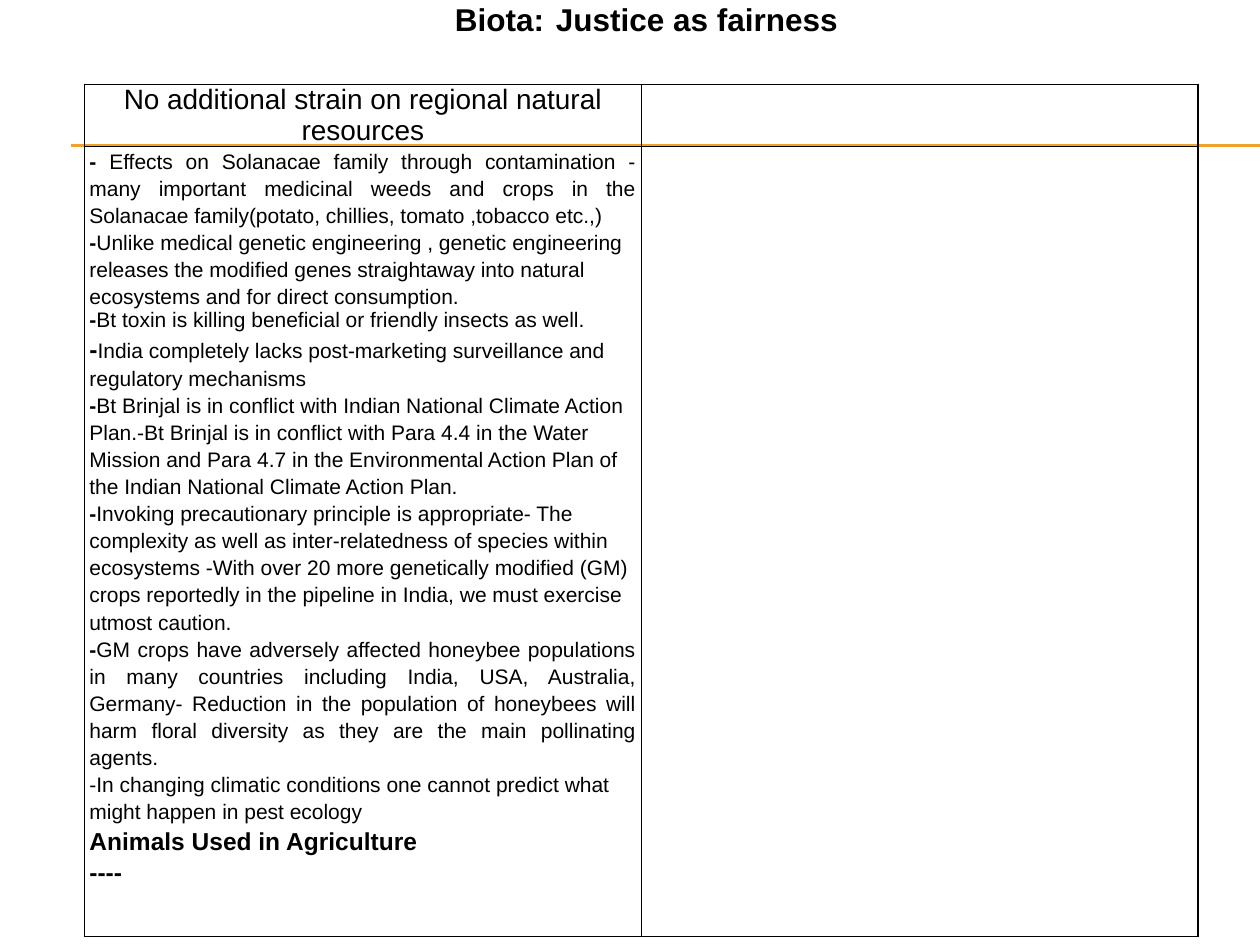
import pptx
import pptx.dml.color
import pptx.enum.shapes
import pptx.enum.text
import pptx.oxml
import pptx.oxml.ns
import pptx.util
from dataclasses import dataclass

BLACK = pptx.dml.color.RGBColor(0x00, 0x00, 0x00)
ORANGE = pptx.dml.color.RGBColor(0xF0, 0xA2, 0x2E)
ALIGN = pptx.enum.text.PP_ALIGN
TITLE_ONLY = 5


@dataclass
class Entry:
    """A paragraph with an optional bold lead before its body."""
    lead: str = ""
    body: str = ""
    lead_size: float = 12
    body_size: float = 12
    align: ALIGN = ALIGN.LEFT
    spacing: float = 1.15


HEADING = Entry(body="No additional strain on regional natural resources",
                body_size=16, align=ALIGN.CENTER, spacing=1)
ARGUMENTS = [
    Entry("- ", "Effects on Solanacae family through contamination - many important "
          "medicinal weeds and crops in the Solanacae family(potato, chillies, "
          "tomato ,tobacco etc.,)", align=ALIGN.JUSTIFY),
    Entry("-", "Unlike medical genetic engineering , genetic engineering releases the "
          "modified genes straightaway into natural ecosystems and for direct consumption."),
    Entry("-", "Bt toxin is killing beneficial or friendly insects as well.", spacing=1),
    Entry("-", "India completely lacks post-marketing surveillance and regulatory "
          "mechanisms", lead_size=14),
    Entry("-", "Bt Brinjal is in conflict with Indian National Climate Action Plan.-Bt "
          "Brinjal is in conflict with Para 4.4 in the Water Mission and Para 4.7 in the "
          "Environmental Action Plan of the Indian National Climate Action Plan."),
    Entry("-", "Invoking precautionary principle is appropriate- The complexity as well as "
          "inter-relatedness of species within ecosystems -With over 20 more genetically "
          "modified (GM) crops reportedly in the pipeline in India, we must exercise "
          "utmost caution."),
    Entry("-", "GM crops have adversely affected honeybee populations in many countries "
          "including India, USA, Australia, Germany- Reduction in the population of "
          "honeybees will harm floral diversity as they are the main pollinating agents.",
          align=ALIGN.JUSTIFY),
    Entry(body="-In changing climatic conditions one cannot predict what might happen in "
          "pest ecology"),
    Entry("Animals Used in Agriculture", lead_size=14),
    Entry("----", lead_size=14),
]


class SlideBuilder:
    """Holds the style and the current slide; lengths are inches on a 10 by 7.5 page."""
    font = "Arial"
    border_width = pptx.util.Pt(1)
    rule_width = pptx.util.Pt(0.75)

    def __init__(self, deck):
        self.page = deck.slides.add_slide(deck.slide_layouts[TITLE_ONLY])

    def add_span(self, para, text, size, bold=False):
        span = para.add_run()
        span.text = text
        span.font.name = self.font
        span.font.size = pptx.util.Pt(size)
        span.font.bold = bold
        span.font.color.rgb = BLACK

    def title(self, spans, left, top, width, height):
        box = self.page.shapes.title
        box.left, box.top, box.width, box.height = map(
            pptx.util.Inches, (left, top, width, height))
        frame = box.text_frame
        frame.word_wrap = False
        frame.auto_size = pptx.enum.text.MSO_AUTO_SIZE.NONE
        frame.vertical_anchor = pptx.enum.text.MSO_ANCHOR.TOP
        frame.margin_top = pptx.util.Inches(0.07)
        para = frame.paragraphs[0]
        para.alignment = ALIGN.CENTER
        for text, size in spans:
            self.add_span(para, text, size, bold=True)

    def rule(self, left, right, height):
        ends = map(pptx.util.Inches, (left, height, right, height))
        line = self.page.shapes.add_connector(
            pptx.enum.shapes.MSO_CONNECTOR.STRAIGHT, *ends)
        line.line.color.rgb = ORANGE
        line.line.width = self.rule_width
        line._element.spPr.append(pptx.oxml.parse_xml(
            f"<a:effectLst {pptx.oxml.ns.nsdecls('a')}/>"))

    def table(self, left, top, column_widths, row_heights):
        frame = self.page.shapes.add_table(
            len(row_heights), len(column_widths),
            *map(pptx.util.Inches, (left, top, sum(column_widths), sum(row_heights))))
        grid = frame.table
        grid.first_row = grid.horz_banding = False
        for column, width in zip(grid.columns, column_widths):
            column.width = pptx.util.Inches(width)
        for row, height in zip(grid.rows, row_heights):
            row.height = pptx.util.Inches(height)
        for cell in grid.iter_cells():
            cell.margin_left = cell.margin_right = pptx.util.Inches(0.04)
            cell.margin_top = cell.margin_bottom = 0
            self.border(cell)
            cell.fill.background()
        return grid

    def border(self, cell):
        properties = cell._tc.get_or_add_tcPr()
        for side in ("lnL", "lnR", "lnT", "lnB"):
            properties.append(pptx.oxml.parse_xml(
                f"<a:{side} {pptx.oxml.ns.nsdecls('a')} w='{self.border_width}'>"
                f"<a:solidFill><a:srgbClr val='{BLACK}'/></a:solidFill></a:{side}>"))

    def fill_cell(self, cell, entries):
        frame = cell.text_frame
        for index, entry in enumerate(entries):
            para = frame.add_paragraph() if index else frame.paragraphs[0]
            para.alignment = entry.align
            para.line_spacing = entry.spacing
            if entry.lead:
                self.add_span(para, entry.lead, entry.lead_size, bold=True)
            if entry.body:
                self.add_span(para, entry.body, entry.body_size)


def main():
    deck = pptx.Presentation()
    deck.slide_width = pptx.util.Inches(10)
    deck.slide_height = pptx.util.Inches(7.5)

    builder = SlideBuilder(deck)
    for height in (1.15, 1.16):
        builder.rule(0.56, 10, height)
    grid = builder.table(0.67, 0.67, column_widths=[4.42] * 2, row_heights=[0.49, 6.27])
    builder.fill_cell(grid.cell(0, 0), [HEADING])
    builder.fill_cell(grid.cell(1, 0), ARGUMENTS)
    builder.title([("Biota:", 18), (" ", 24), ("Justice as fairness", 18)],
                  3.36, -0.15, 3.54, 0.81)
    deck.save("out.pptx")


if __name__ == "__main__":
    main()
